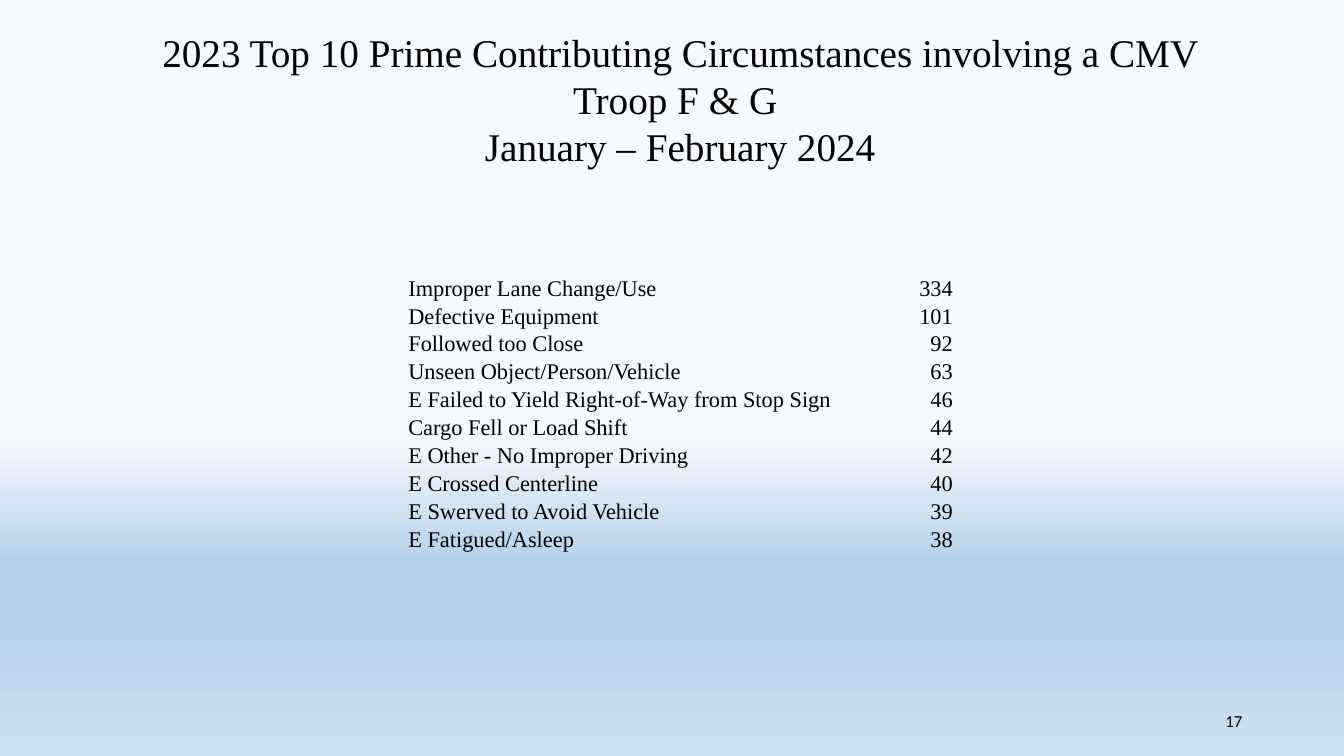
from copy import deepcopy

from pptx import Presentation
from pptx import util as u
from pptx.dml import color
from pptx.enum import text
from pptx.oxml import ns

COLORS = {"text": "000000", "pale": "F7FAFD", "blue": "B5D2EC", "light": "CEE1F2"}
GRADIENT = [(0.58, "pale"), (0.74, "blue"), (0.83, "blue"), (1, "light")]
NO_GRID_STYLE = "{2D5ABB26-0587-4C30-8999-92F81FD0307C}"
TITLE = [
    "2023 Top 10 Prime Contributing Circumstances involving a CMV Troop F & G ",
    "January – February 2024",
]
CIRCUMSTANCES = [
    ("Improper Lane Change/Use", 334),
    ("Defective Equipment", 101),
    ("Followed too Close", 92),
    ("Unseen Object/Person/Vehicle", 63),
    ("E Failed to Yield Right-of-Way from Stop Sign", 46),
    ("Cargo Fell or Load Shift", 44),
    ("E Other - No Improper Driving", 42),
    ("E Crossed Centerline", 40),
    ("E Swerved to Avoid Vehicle", 39),
    ("E Fatigued/Asleep", 38),
]


def write(frame, lines, size=16, font="Times New Roman", align="LEFT", anchor="TOP"):
    frame.word_wrap = True
    frame.vertical_anchor = text.MSO_ANCHOR[anchor]
    for index, line in enumerate(lines):
        paragraph = frame.add_paragraph() if index else frame.paragraphs[0]
        paragraph.alignment = text.PP_ALIGN[align]
        run = paragraph.add_run()
        run.text = line
        run.font.size = u.Pt(size)
        run.font.name = font
        run.font.color.rgb = color.RGBColor.from_string(COLORS["text"])


class SlideBuilder:
    """Hold the slide and its style, and add each kind of element."""

    def __init__(self, slide):
        self.slide = slide

    def background(self, stops, angle):
        fill = self.slide.background.fill
        fill.gradient()
        fill.gradient_angle = angle
        stop_list = next(self.slide.element.iter(ns.qn("a:gsLst")))
        while len(stop_list) < len(stops):
            stop_list.append(deepcopy(stop_list[0]))
        for stop, (position, name) in zip(fill.gradient_stops, stops):
            stop.position = position
            stop.color.rgb = color.RGBColor.from_string(COLORS[name])

    def text_box(self, lines, left, top, width, height, **style):
        box = self.slide.shapes.add_textbox(*map(u.Inches, (left, top, width, height)))
        write(box.text_frame, lines, **style)

    def table(self, rows, left, top, widths, height):
        shape = self.slide.shapes.add_table(
            len(rows), len(widths), *map(u.Inches, (left, top, sum(widths), height)))
        table = shape.table
        table.first_row = table.horz_banding = False
        next(shape.element.iter(ns.qn("a:tableStyleId"))).text = NO_GRID_STYLE
        for column, width in zip(table.columns, widths):
            column.width = u.Inches(width)
        for row, values in zip(table.rows, rows):
            for cell, value, align in zip(row.cells, values, ("LEFT", "RIGHT")):
                cell.fill.background()
                cell.margin_left = cell.margin_right = cell.margin_top = u.Inches(0.01)
                cell.margin_bottom = 0
                write(cell.text_frame, [str(value)], align=align)
                cell.vertical_anchor = text.MSO_ANCHOR.BOTTOM


def main():
    presentation = Presentation()
    presentation.slide_width = u.Inches(13.33)
    presentation.slide_height = u.Inches(7.5)
    builder = SlideBuilder(presentation.slides.add_slide(presentation.slide_layouts[6]))
    builder.background(GRADIENT, 270)
    builder.text_box(["17"], 9.42, 6.95, 3, 0.4,
                     size=12, font="Calibri", align="RIGHT", anchor="MIDDLE")
    builder.text_box(TITLE, 1.07, 0.23, 11.35, 3.87, size=28, align="CENTER")
    builder.table(CIRCUMSTANCES, 4.04, 2.71, (4.69, 0.73), 2.77)
    presentation.save("out.pptx")


if __name__ == "__main__":
    main()
